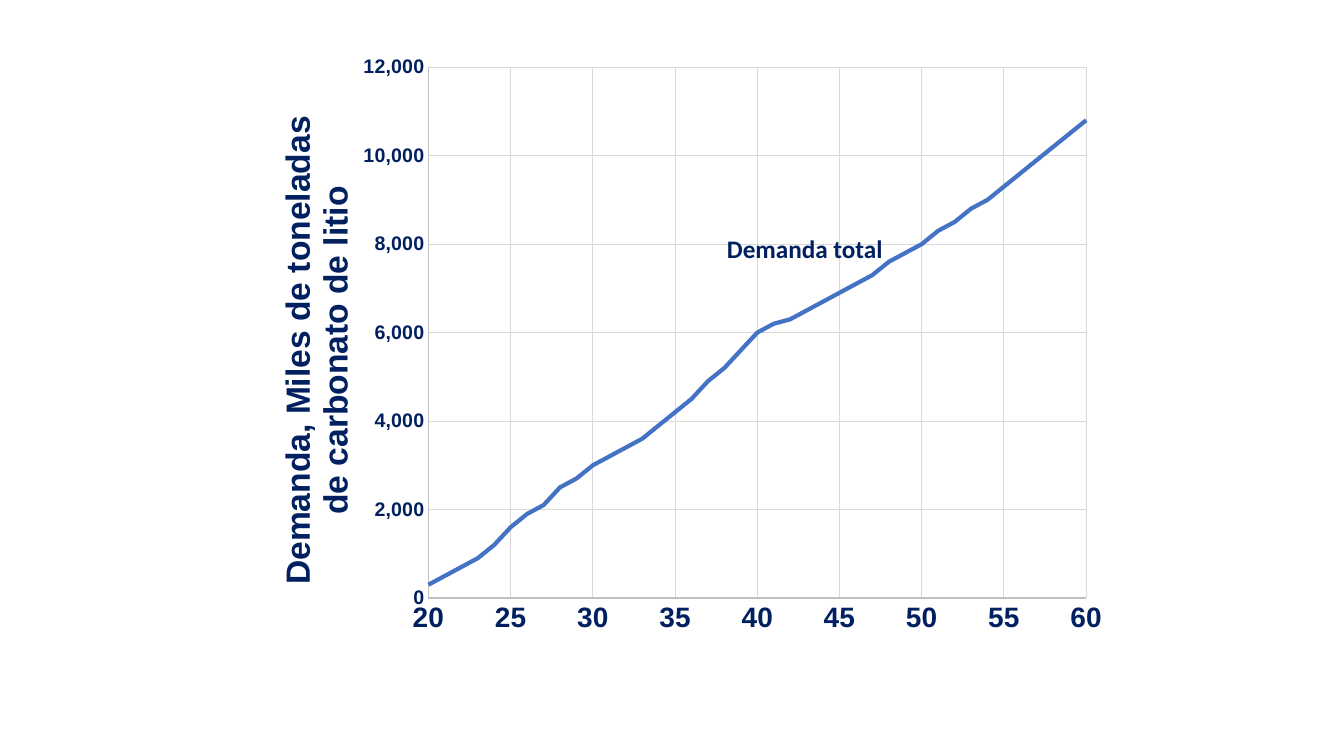
"""Build a slide with a scatter chart of total lithium carbonate demand."""
import pptx
import pptx.chart.data
import pptx.dml.color
import pptx.enum.chart
import pptx.enum.text
import pptx.oxml
import pptx.oxml.ns
import pptx.util

NAVY = pptx.dml.color.RGBColor(0x00, 0x20, 0x60)
BLUE = pptx.dml.color.RGBColor(0x44, 0x72, 0xC4)
AXIS_GREY = pptx.dml.color.RGBColor(0xBF, 0xBF, 0xBF)
GRID_GREY = pptx.dml.color.RGBColor(0xD9, 0xD9, 0xD9)
BLACK = pptx.dml.color.RGBColor(0, 0, 0)

FIRST_YEAR = 20
DEMAND = [
    300, 500, 700, 900, 1200, 1600, 1900, 2100, 2500, 2700,
    3000, 3200, 3400, 3600, 3900, 4200, 4500, 4900, 5200, 5600,
    6000, 6200, 6300, 6500, 6700, 6900, 7100, 7300, 7600, 7800,
    8000, 8300, 8500, 8800, 9000, 9300, 9600, 9900, 10200, 10500,
    10800,
]
YEAR_AXIS = {"minimum_scale": 20, "maximum_scale": 60, "major_unit": 5}
DEMAND_AXIS = {"minimum_scale": 0, "maximum_scale": 12000, "major_unit": 2000}


def px(n):
    """Turn pixels into EMU."""
    return pptx.util.Emu(round(n * 914400 / 100.8))


def set_attrs(obj, values):
    """Set each attribute named in a dict."""
    for name, value in values.items():
        setattr(obj, name, value)


def set_font(font, size, color=NAVY, bold=True, name="Arial"):
    """Format a font."""
    set_attrs(font, {"size": pptx.util.Pt(size), "bold": bold, "name": name})
    font.color.rgb = color


def set_line(line, color, width):
    """Format a line with a colour and a width in points."""
    line.color.rgb = color
    line.width = pptx.util.Pt(width)


def set_layout(parent, index, **values):
    """Place a chart part by fractions of the chart area."""
    for old in parent.findall(pptx.oxml.ns.qn("c:layout")):
        parent.remove(old)
    items = "".join(f'<c:{k} val="{v}"/>' for k, v in values.items())
    parent.insert(index, pptx.oxml.parse_xml(
        f'<c:layout {pptx.oxml.ns.nsdecls("c")}>'
        f"<c:manualLayout>{items}</c:manualLayout></c:layout>"))


def format_axis(axis, size, scale):
    """Format an axis, its labels and its gridlines."""
    none = pptx.enum.chart.XL_TICK_MARK.NONE
    set_attrs(axis, {"has_major_gridlines": True, "major_tick_mark": none,
                     "minor_tick_mark": none, **scale})
    set_line(axis.format.line, AXIS_GREY, 0.75)
    set_line(axis.major_gridlines.format.line, GRID_GREY, 0.75)
    set_attrs(axis.tick_labels,
              {"number_format": "#,##0", "number_format_is_linked": False})
    set_font(axis.tick_labels.font, size)


def add_axis_title(axis, text):
    """Add an upright axis title at the left of the chart."""
    title = axis.axis_title
    tf = title.text_frame
    r = tf.paragraphs[0].add_run()
    r.text = text
    set_font(r.font, 24)
    body = tf._txBody.find(pptx.oxml.ns.qn("a:bodyPr"))
    body.set("rot", "-5400000")
    body.set("vert", "horz")
    set_layout(title._element, 1, xMode="edge", yMode="edge", x=0.03, y=0.11)


def add_demand_chart(s, left, top, width, height):
    """Add the smooth scatter chart of demand by year."""
    data = pptx.chart.data.XyChartData()
    points = data.add_series("Series 1")
    for year, demand in enumerate(DEMAND, FIRST_YEAR):
        points.add_data_point(year, demand)
    chart = s.shapes.add_chart(
        pptx.enum.chart.XL_CHART_TYPE.XY_SCATTER_SMOOTH_NO_MARKERS,
        px(left), px(top), px(width), px(height), data).chart
    set_attrs(chart, {"has_legend": False, "has_title": False})
    set_font(chart.font, 10, BLACK, False)
    plot = chart.plots[0]
    plot.vary_by_categories = False
    series = plot.series[0]
    series.smooth = True
    set_line(series.format.line, BLUE, 3)
    format_axis(chart.category_axis, 20, YEAR_AXIS)
    format_axis(chart.value_axis, 14, DEMAND_AXIS)
    add_axis_title(chart.value_axis,
                   "Demanda, Miles de toneladas de carbonato de litio")
    plot_area = chart._chartSpace.chart.plotArea
    set_layout(plot_area, 0, layoutTarget="inner", xMode="edge", yMode="edge",
               x=0.2115, y=0.0385, w=0.75, h=0.882)


def add_label(s, text, left, top, width, height):
    """Add a bold text label."""
    sp = s.shapes.add_textbox(px(left), px(top), px(width), px(height))
    tf = sp.text_frame
    set_attrs(tf, {"word_wrap": True,
                   "auto_size": pptx.enum.text.MSO_AUTO_SIZE.SHAPE_TO_FIT_TEXT})
    r = tf.paragraphs[0].add_run()
    r.text = text
    set_font(r.font, 18, name="Calibri")


def main():
    """Build and save the slide."""
    prs = pptx.Presentation()
    set_attrs(prs, {"slide_width": px(1344), "slide_height": px(756)})
    s = prs.slides.add_slide(prs.slide_layouts[6])
    add_demand_chart(s, 243, 44, 877, 602)
    add_label(s, "Demanda total", 717, 228, 178, 40)
    prs.save("out.pptx")


if __name__ == "__main__":
    main()
